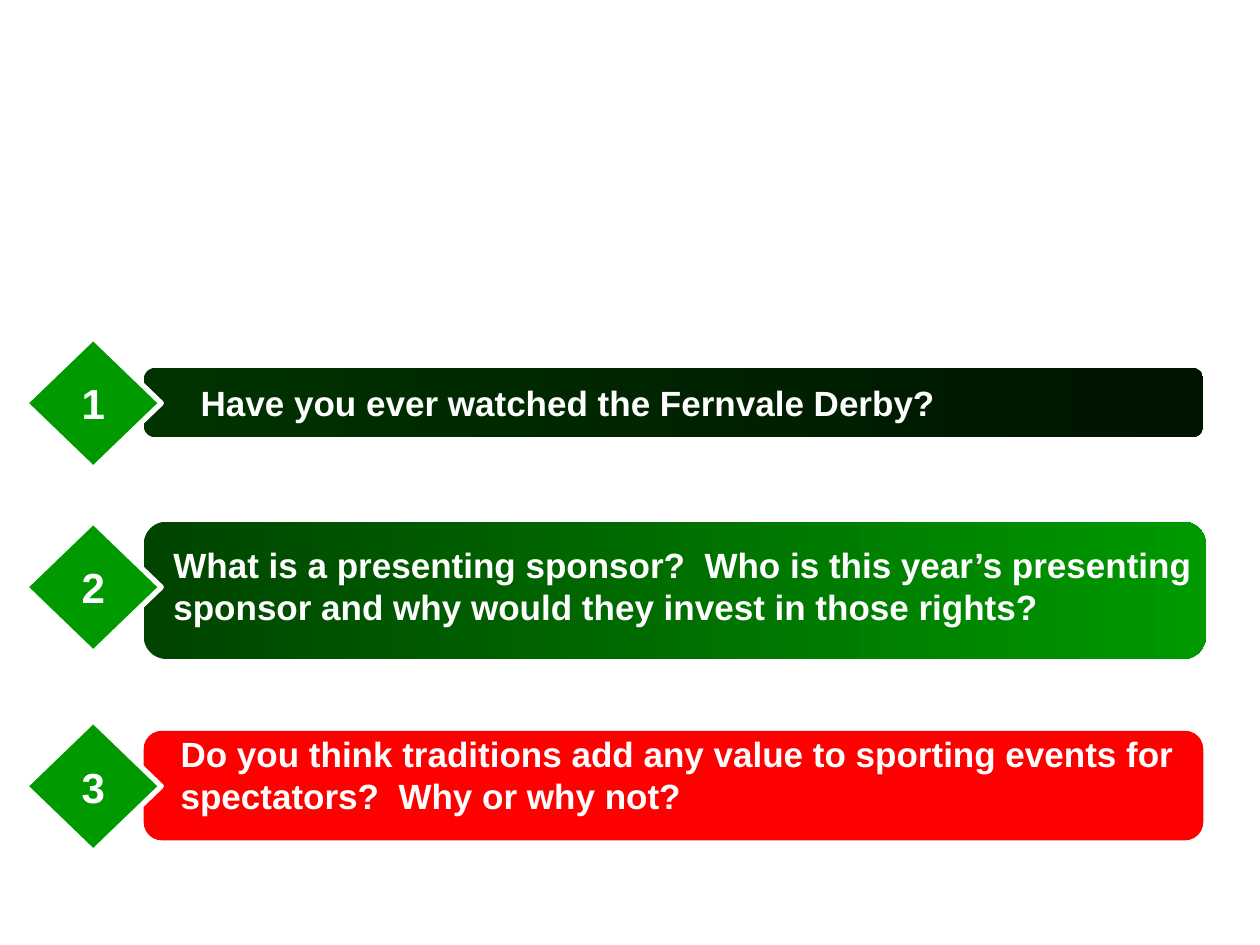
from pptx import Presentation
from pptx.dml.color import RGBColor
from pptx.enum.shapes import MSO_SHAPE
from pptx.enum.text import MSO_ANCHOR, PP_ALIGN
from pptx.util import Inches, Pt

ROUNDED, DIAMOND = MSO_SHAPE.ROUNDED_RECTANGLE, MSO_SHAPE.DIAMOND
MIDDLE = MSO_ANCHOR.MIDDLE
LEFT, CENTER = PP_ALIGN.LEFT, PP_ALIGN.CENTER

WHITE = RGBColor(0xFF, 0xFF, 0xFF)
GREEN = RGBColor(0x00, 0x99, 0x00)
DEEP_GREEN = RGBColor(0x00, 0x44, 0x00)
FOREST = RGBColor(0x00, 0x33, 0x00)
NEAR_BLACK = RGBColor(0x00, 0x14, 0x00)
RED = RGBColor(0xFF, 0x00, 0x00)

BAR_LEFT = 1.14
BADGE_LEFT, BADGE_WIDTH, BADGE_HEIGHT = 0.2, 1.08, 1.04

# bar (top, width, height), bar colours, badge top, question box, question lines
QUESTIONS = [
    ((2.92, 8.41, 0.55), (FOREST, NEAR_BLACK), 2.68, (1.46, 2.84, 7.84, 0.71),
     ["Have you ever watched the Fernvale Derby?"]),
    ((4.14, 8.43, 1.09), (DEEP_GREEN, GREEN), 4.14, (1.22, 4.06, 8.05, 1.18),
     ["What is a presenting sponsor?  Who is this year’s presenting",
      "sponsor and why would they invest in those rights?"]),
    ((5.8, 8.41, 0.87), (RED,), 5.72, (1.3, 5.79, 8.05, 0.71),
     ["Do you think traditions add any value to sporting events for",
      "spectators?  Why or why not?"]),
]

prs = Presentation()
prs.slide_width, prs.slide_height = Inches(10), Inches(7.5)
slide = prs.slides.add_slide(prs.slide_layouts[6])


def add_plain_shape(kind, *box):
    """Add a shape with no shadow, fill or line; box is in inches."""
    shape = slide.shapes.add_shape(kind, *map(Inches, box))
    shape.shadow.inherit = False
    shape.fill.background()
    shape.line.fill.background()
    return shape


def write_lines(shape, lines, size, alignment):
    frame = shape.text_frame
    frame.word_wrap = False
    frame.vertical_anchor = MIDDLE
    frame.text = "\n".join(lines)
    for paragraph in frame.paragraphs:
        paragraph.alignment = alignment
        font = paragraph.runs[0].font
        font.name, font.size, font.bold = "Arial", Pt(size), True
        font.color.rgb = WHITE


for number, (bar_box, colors, badge_top, question_box, lines) in enumerate(QUESTIONS, 1):
    bar = add_plain_shape(ROUNDED, BAR_LEFT, *bar_box)
    if len(colors) == 1:
        bar.fill.solid()
        bar.fill.fore_color.rgb = colors[0]
    else:
        bar.fill.gradient()
        bar.fill.gradient_angle = 0
        for stop, color, position in zip(bar.fill.gradient_stops, colors, (0, 1)):
            stop.color.rgb = color
            stop.position = position

    question = add_plain_shape(ROUNDED, *question_box)
    write_lines(question, lines, 20, LEFT)

    badge = add_plain_shape(DIAMOND, BADGE_LEFT, badge_top, BADGE_WIDTH, BADGE_HEIGHT)
    badge.fill.solid()
    badge.fill.fore_color.rgb = GREEN
    badge.line.color.rgb = WHITE
    badge.line.width = Pt(3)
    write_lines(badge, [str(number)], 24, CENTER)

prs.save("out.pptx")
